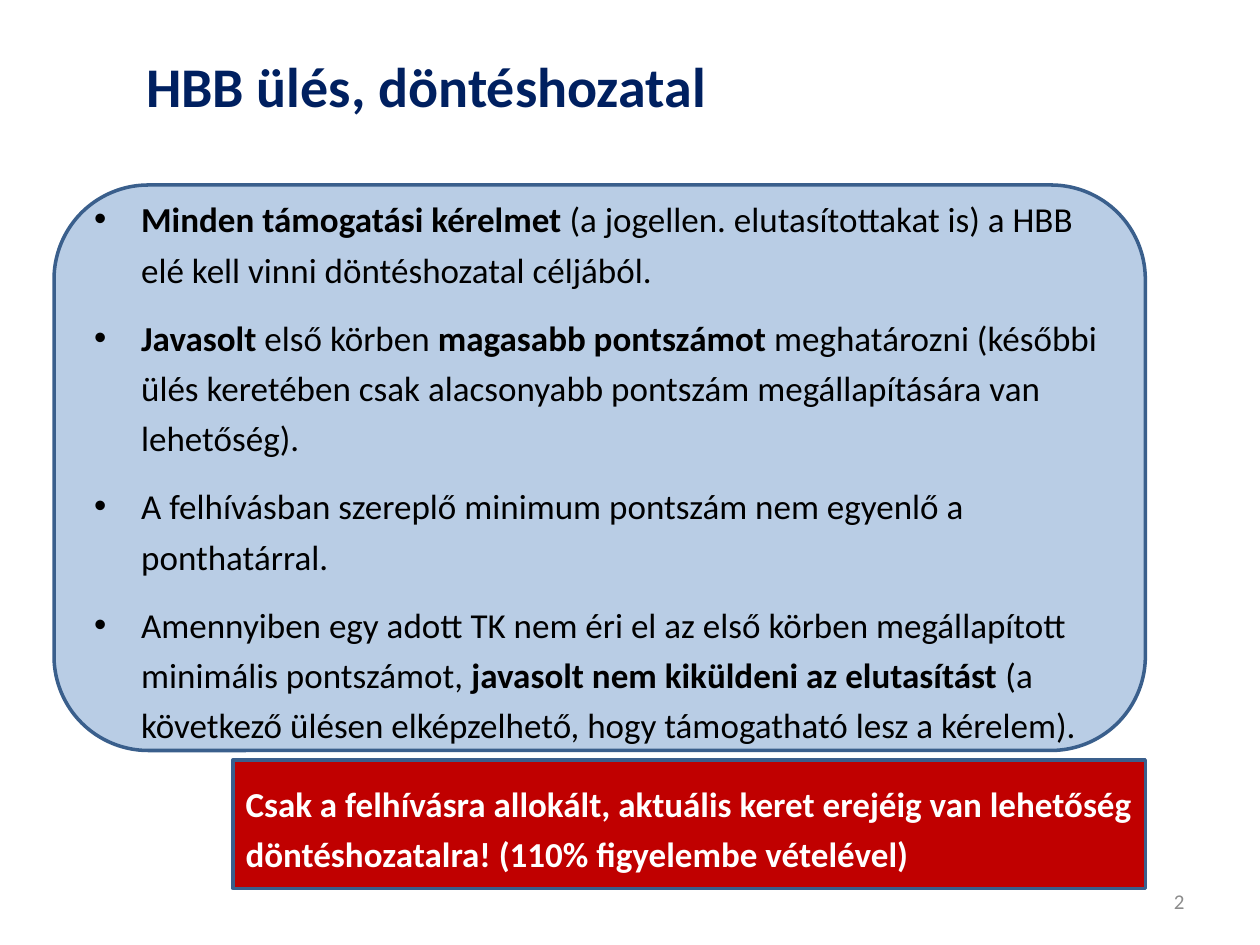
from lxml.etree import SubElement
from pptx import Presentation
from pptx.dml.color import RGBColor
from pptx.enum.shapes import MSO_SHAPE
from pptx.enum.text import MSO_ANCHOR, PP_ALIGN
from pptx.oxml.ns import qn
from pptx.util import Cm, Pt

COLORS = {
    "title": "002060",
    "panel": "B9CDE5",
    "outline": "3A5F8C",
    "warning": "C00000",
    "body": "000000",
    "white": "FFFFFF",
    "number": "8C8C8C",
}
BODY_FORMAT = {"line_spacing": 1.2, "space_after": Pt(10)}

# Each bullet is a list of (text, bold) spans.
BULLETS = [
    [("Minden támogatási kérelmet ", True),
     ("(a jogellen. elutasítottakat is) a HBB elé kell vinni döntéshozatal céljából.", False)],
    [("Javasolt", True), (" első körben ", False), ("magasabb pontszámot ", True),
     ("meghatározni (későbbi ülés keretében csak alacsonyabb pontszám "
      "megállapítására van lehetőség).", False)],
    [("A felhívásban szereplő minimum pontszám nem egyenlő a ponthatárral.", False)],
    [("Amennyiben egy adott TK nem éri el az első körben megállapított "
      "minimális pontszámot, ", False),
     ("javasolt nem kiküldeni az elutasítást", True),
     (" (a következő ülésen elképzelhető, hogy támogatható lesz a kérelem).", False)],
]
WARNING = ("Csak a felhívásra allokált, aktuális keret erejéig van lehetőség "
           "döntéshozatalra! (110% figyelembe vételével)")


def color(name):
    return RGBColor.from_string(COLORS[name])


def set_values(target, values):
    for name, value in values.items():
        setattr(target, name, value)


def add_bullet(para):
    """Give the paragraph a round bullet with a hanging indent."""
    properties = para._p.get_or_add_pPr()
    indent = Cm(0.95)
    properties.set("marL", str(indent))
    properties.set("indent", str(-indent))
    SubElement(properties, qn("a:buFont"), typeface="Arial")
    SubElement(properties, qn("a:buChar"), char="•")


def write_spans(para, spans, size, color_name, **paragraph_format):
    set_values(para, paragraph_format)
    for text, bold in spans:
        span = para.add_run()
        span.text = text
        set_values(span.font, {"name": "Calibri", "size": Pt(size), "bold": bold})
        span.font.color.rgb = color(color_name)


def add_label(page, position, text, size, color_name, bold, anchor, alignment):
    box = page.shapes.add_textbox(*map(Cm, position))
    set_values(box.text_frame, {"word_wrap": True, "vertical_anchor": anchor})
    write_spans(box.text_frame.paragraphs[0], [(text, bold)], size, color_name,
                alignment=alignment)


def add_panel(page, kind, position, fill_name):
    """Add an outlined shape and return its text frame."""
    panel = page.shapes.add_shape(kind, *map(Cm, position))
    panel.shadow.inherit = False
    panel.fill.solid()
    panel.fill.fore_color.rgb = color(fill_name)
    panel.line.color.rgb = color("outline")
    panel.line.width = Pt(2)
    set_values(panel.text_frame, {"word_wrap": True, "vertical_anchor": MSO_ANCHOR.MIDDLE})
    return panel.text_frame


def add_bullet_panel(page):
    frame = add_panel(page, MSO_SHAPE.ROUNDED_RECTANGLE, (1.09, 3.73, 22, 11.4), "panel")
    for index, spans in enumerate(BULLETS):
        para = frame.add_paragraph() if index else frame.paragraphs[0]
        add_bullet(para)
        write_spans(para, spans, 20, "body", alignment=PP_ALIGN.LEFT, **BODY_FORMAT)


def add_warning(page):
    frame = add_panel(page, MSO_SHAPE.RECTANGLE, (4.7, 15.32, 18.39, 2.59), "warning")
    write_spans(frame.paragraphs[0], [(WARNING, True)], 20, "white",
                alignment=PP_ALIGN.LEFT, line_spacing=1.2)


def main():
    deck = Presentation()
    set_values(deck, {"slide_width": Cm(25.4), "slide_height": Cm(19.05)})
    page = deck.slides.add_slide(deck.slide_layouts[6])
    add_label(page, (18.2, 17.66, 5.93, 1.01), "2", 12, "number", False,
              MSO_ANCHOR.MIDDLE, PP_ALIGN.RIGHT)
    add_label(page, (1.09, 0.91, 15.01, 1.62), "HBB ülés, döntéshozatal", 32, "title", True,
              MSO_ANCHOR.TOP, PP_ALIGN.CENTER)
    add_bullet_panel(page)
    add_warning(page)
    deck.save("out.pptx")


if __name__ == "__main__":
    main()
